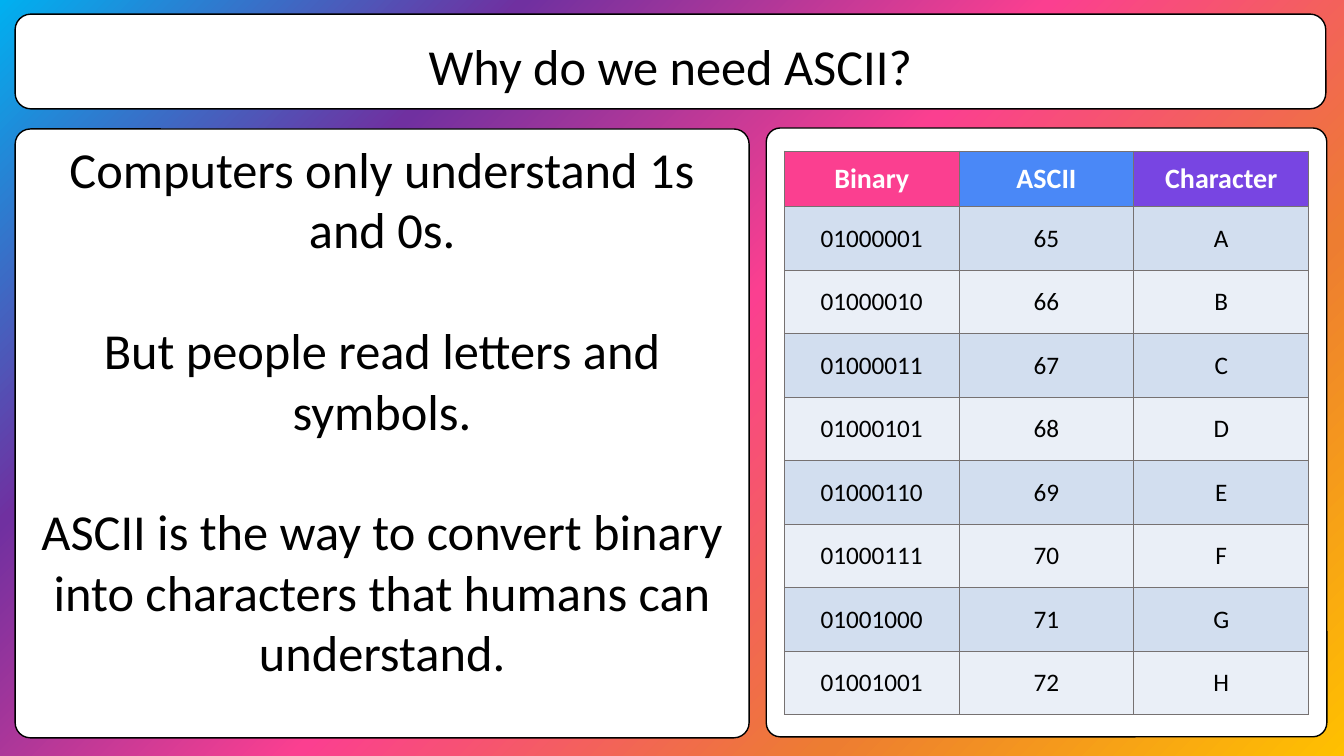
from pptx import Presentation
from pptx.dml.color import RGBColor
from pptx.enum.shapes import MSO_SHAPE
from pptx.enum.text import MSO_ANCHOR, MSO_AUTO_SIZE, PP_ALIGN
from pptx.oxml import parse_xml
from pptx.oxml.ns import nsdecls
from pptx.util import Inches, Pt

TITLE = "Why do we need ASCII?"
STATEMENTS = [
    "Computers only understand 1s and 0s.",
    "But people read letters and symbols.",
    "ASCII is the way to convert binary into characters that humans can understand.",
]
HEADERS = [("Binary", "pink"), ("ASCII", "blue"), ("Character", "violet")]
BINARY_CODES = ["01000001", "01000010", "01000011", "01000101",
                "01000110", "01000111", "01001000", "01001001"]
FIRST_CODE = 65

COLORS = {
    "white": "FFFFFF", "black": "000000", "border": "767171",
    "pink": "FB3F90", "blue": "4A88F7", "violet": "7845E2",
    "band_dark": "D2DEEF", "band_light": "EAEFF7",
}
BACKGROUND_STOPS = ["FFC000", "ED7D31", "FB3F90", "7030A0", "00B0F0"]
FONT = "Calibri"

# left, top, width, height in inches
TITLE_BOX = (0.15, 0.14, 13, 0.94)
TEXT_BOX = (0.15, 1.28, 7.28, 6.04)
TABLE_PANEL = (7.6, 1.27, 5.56, 6.04)
PANELS = [(TABLE_PANEL, 0.025), (TEXT_BOX, 0.025), (TITLE_BOX, 0.1667)]
TABLE_LEFT, TABLE_TOP, TABLE_WIDTH = 7.78, 1.5, 5.2
HEADER_HEIGHT, ROW_HEIGHT = 0.55, 0.63


def color(name):
    return RGBColor.from_string(COLORS[name])


def set_format(target, values):
    for name, value in values.items():
        setattr(target, name, value)


def format_paragraph(paragraph, size, color_name="black", bold=False, **spacing):
    set_format(paragraph, {"alignment": PP_ALIGN.CENTER, **spacing})
    set_format(paragraph.font, {"name": FONT, "size": Pt(size), "bold": bold})
    paragraph.font.color.rgb = color(color_name)


def set_background(slide):
    last = len(BACKGROUND_STOPS) - 1
    stops = "".join(
        f'<a:gs pos="{100000 * index // last}"><a:srgbClr val="{value}"/></a:gs>'
        for index, value in enumerate(BACKGROUND_STOPS))
    slide.element.cSld.insert(0, parse_xml(
        f'<p:bg {nsdecls("p", "a")}><p:bgPr><a:gradFill rotWithShape="1">'
        f'<a:gsLst>{stops}</a:gsLst><a:path path="circle">'
        '<a:fillToRect l="100000" t="100000"/></a:path></a:gradFill>'
        '<a:effectLst/></p:bgPr></p:bg>'))


def add_panels(slide):
    """Add the white rounded panels behind the placeholders."""
    for index, (box, radius) in enumerate(PANELS):
        panel = slide.shapes.add_shape(
            MSO_SHAPE.ROUNDED_RECTANGLE, *map(Inches, box))
        panel.adjustments[0] = radius
        panel.shadow.inherit = False
        panel.fill.solid()
        panel.fill.fore_color.rgb = color("white")
        panel.line.color.rgb = color("black")
        panel.line.width = Pt(1)
        slide.shapes.element.insert(2 + index, panel.element)


def place_placeholder(shape, box, text, anchor):
    set_format(shape, dict(zip(("left", "top", "width", "height"),
                               map(Inches, box))))
    shape.text_frame.text = text
    set_format(shape.text_frame, {
        "word_wrap": True, "auto_size": MSO_AUTO_SIZE.NONE,
        "vertical_anchor": anchor, "margin_left": Inches(0.14),
        "margin_right": Inches(0.14), "margin_top": Inches(0.09)})


def add_texts(slide):
    title, body = slide.shapes.title, slide.placeholders[1]
    place_placeholder(title, TITLE_BOX, TITLE, MSO_ANCHOR.MIDDLE)
    format_paragraph(title.text_frame.paragraphs[0], 36,
                     line_spacing=1.07, space_after=Pt(8))
    place_placeholder(body, TEXT_BOX, "\n".join(STATEMENTS), MSO_ANCHOR.TOP)
    for index, paragraph in enumerate(body.text_frame.paragraphs):
        properties = paragraph._p.get_or_add_pPr()
        properties.set("marL", "0")
        properties.set("indent", "0")
        properties.append(parse_xml(f'<a:buNone {nsdecls("a")}/>'))
        format_paragraph(paragraph, 36, space_before=Pt(43 if index else 0))


def fill_cell(cell, text, fill, **text_format):
    cell.text = text
    cell.vertical_anchor = MSO_ANCHOR.MIDDLE
    properties = cell._tc.get_or_add_tcPr()
    for side in "LRTB":
        properties.append(parse_xml(
            f'<a:ln{side} {nsdecls("a")} w="12700"><a:solidFill>'
            f'<a:srgbClr val="{COLORS["border"]}"/></a:solidFill></a:ln{side}>'))
    cell.fill.solid()
    cell.fill.fore_color.rgb = color(fill)
    format_paragraph(cell.text_frame.paragraphs[0], **text_format)


def add_code_table(slide):
    row_count, column_count = len(BINARY_CODES) + 1, len(HEADERS)
    height = HEADER_HEIGHT + ROW_HEIGHT * len(BINARY_CODES)
    table = slide.shapes.add_table(
        row_count, column_count, Inches(TABLE_LEFT), Inches(TABLE_TOP),
        Inches(TABLE_WIDTH), Inches(height)).table
    for index, row in enumerate(table.rows):
        row.height = Inches(ROW_HEIGHT if index else HEADER_HEIGHT)
    for column, (text, fill) in enumerate(HEADERS):
        fill_cell(table.cell(0, column), text, fill,
                  size=20, color_name="white", bold=True)
    for index, binary in enumerate(BINARY_CODES):
        code = FIRST_CODE + index
        band = "band_light" if index % 2 else "band_dark"
        for column, text in enumerate((binary, str(code), chr(code))):
            fill_cell(table.cell(index + 1, column), text, band, size=18)


def main():
    presentation = Presentation()
    set_format(presentation, {"slide_width": Inches(13.33),
                              "slide_height": Inches(7.5)})
    slide = presentation.slides.add_slide(presentation.slide_layouts[1])
    set_background(slide)
    add_panels(slide)
    add_texts(slide)
    add_code_table(slide)
    presentation.save("out.pptx")


if __name__ == "__main__":
    main()
